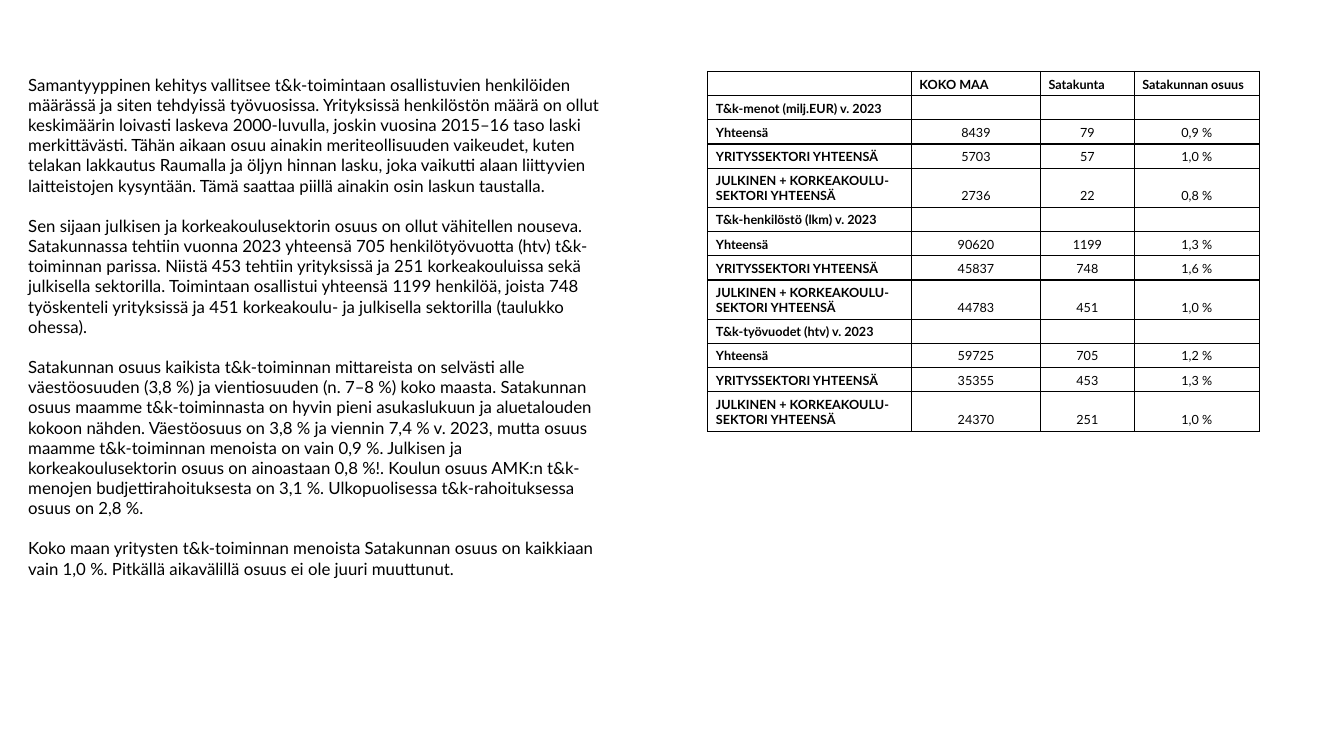
from dataclasses import dataclass

from pptx import Presentation
from pptx.dml.color import RGBColor as Color
from pptx.enum.text import MSO_ANCHOR as Anchor, PP_ALIGN as Align
from pptx.oxml.ns import qn
from pptx.util import Inches, Pt
from lxml.etree import SubElement


@dataclass(frozen=True)
class Theme:
    """Hold the colours, font and type sizes."""
    font: str = "Lato"
    ink: str = "000000"
    body: float = 12
    cell: float = 9
    gap: float = 14.4
    rule: float = 1


THEME = Theme()
WIDTHS = (2.02, 1.28, 0.93, 1.24)
SHORT, TALL = 0.24, 0.39
HEAD = ("", "KOKO MAA", "Satakunta", "Satakunnan osuus")
SECTORS = ("Yhteensä", "YRITYSSEKTORI YHTEENSÄ",
           "JULKINEN + KORKEAKOULU-SEKTORI YHTEENSÄ")
GROUPS = {
    "T&k-menot (milj.EUR) v. 2023": (
        ("8439", "79", "0,9 %"), ("5703", "57", "1,0 %"), ("2736", "22", "0,8 %")),
    "T&k-henkilöstö (lkm) v. 2023": (
        ("90620", "1199", "1,3 %"), ("45837", "748", "1,6 %"), ("44783", "451", "1,0 %")),
    "T&k-työvuodet (htv) v. 2023": (
        ("59725", "705", "1,2 %"), ("35355", "453", "1,3 %"), ("24370", "251", "1,0 %")),
}
STORY = (
    "Samantyyppinen kehitys vallitsee t&k-toimintaan osallistuvien henkilöiden "
    "määrässä ja siten tehdyissä työvuosissa. Yrityksissä henkilöstön määrä on ollut "
    "keskimäärin loivasti laskeva 2000-luvulla, joskin vuosina 2015–16 taso laski "
    "merkittävästi. Tähän aikaan osuu ainakin meriteollisuuden vaikeudet, kuten "
    "telakan lakkautus Raumalla ja öljyn hinnan lasku, joka vaikutti alaan liittyvien "
    "laitteistojen kysyntään. Tämä saattaa piillä ainakin osin laskun taustalla.",
    "Sen sijaan julkisen ja korkeakoulusektorin osuus on ollut vähitellen nouseva. "
    "Satakunnassa tehtiin vuonna 2023 yhteensä 705 henkilötyövuotta (htv) "
    "t&k-toiminnan parissa. Niistä 453 tehtiin yrityksissä ja 251 korkeakouluissa sekä "
    "julkisella sektorilla. Toimintaan osallistui yhteensä 1199 henkilöä, joista 748 "
    "työskenteli yrityksissä ja 451 korkeakoulu- ja julkisella sektorilla (taulukko "
    "ohessa).",
    "Satakunnan osuus kaikista t&k-toiminnan mittareista on selvästi alle "
    "väestöosuuden (3,8 %) ja vientiosuuden (n. 7–8 %) koko maasta. Satakunnan "
    "osuus maamme t&k-toiminnasta on hyvin pieni asukaslukuun ja aluetalouden "
    "kokoon nähden. Väestöosuus on 3,8 % ja viennin 7,4 % v. 2023, mutta osuus "
    "maamme t&k-toiminnan menoista on vain 0,9 %. Julkisen ja "
    "korkeakoulusektorin osuus on ainoastaan 0,8 %!. Koulun osuus AMK:n "
    "t&k-menojen budjettirahoituksesta on 3,1 %. Ulkopuolisessa t&k-rahoituksessa "
    "osuus on 2,8 %.",
    "Koko maan yritysten t&k-toiminnan menoista Satakunnan osuus on kaikkiaan "
    "vain 1,0 %. Pitkällä aikavälillä osuus ei ole juuri muuttunut.",
)


def style(para, size, bold=False):
    """Give every run of a paragraph its font."""
    for run in para.runs:
        font = run.font
        font.name, font.size, font.bold = THEME.font, Pt(size), bold
        font.color.rgb = Color.from_string(THEME.ink)


def frame(cell):
    """Draw the four borders of a table cell."""
    props = cell._tc.get_or_add_tcPr()
    for side in "LRTB":
        line = SubElement(props, qn(f"a:ln{side}"), w=str(Pt(THEME.rule)))
        fill = SubElement(line, qn("a:solidFill"))
        SubElement(fill, qn("a:srgbClr"), val=THEME.ink)


def fill_cell(cell, text, bold):
    """Write and format one table cell."""
    frame(cell)
    cell.fill.background()
    cell.vertical_anchor = Anchor.BOTTOM
    cell.margin_left = cell.margin_right = Inches(0.08)
    cell.margin_top = cell.margin_bottom = Inches(0.04)
    para = cell.text_frame.paragraphs[0]
    para.text = text
    para.alignment = Align.LEFT if bold else Align.CENTER
    style(para, THEME.cell, bold)
    if not text:
        SubElement(para._p, qn("a:endParaRPr"), sz=str(int(THEME.cell * 100)))


def add_story(slide, left, top, width, height):
    """Place the running text in its box."""
    box = slide.shapes.add_textbox(*map(Inches, (left, top, width, height)))
    text = box.text_frame
    text.word_wrap = True
    text.vertical_anchor = Anchor.TOP
    text.margin_left = text.margin_right = text.margin_bottom = 0
    text.margin_top = Inches(0.03)
    text.text = "\n".join(STORY)
    for para in text.paragraphs:
        para.space_after = Pt(THEME.gap)
        style(para, THEME.body)


def add_figures(slide, left, top):
    """Place the table of research figures at a corner."""
    rows = [HEAD]
    for title, lines in GROUPS.items():
        rows.append((title, "", "", ""))
        rows += [(name, *line) for name, line in zip(SECTORS, lines)]
    highs = [TALL if row[0] == SECTORS[-1] else SHORT for row in rows]
    size = (left, top, sum(WIDTHS), sum(highs))
    table = slide.shapes.add_table(len(rows), len(HEAD), *map(Inches, size)).table
    table.first_row = table.horz_banding = False
    for col, width in zip(table.columns, WIDTHS):
        col.width = Inches(width)
    for r, (row, high) in enumerate(zip(rows, highs)):
        table.rows[r].height = Inches(high)
        for c, text in enumerate(row):
            fill_cell(table.cell(r, c), text, r == 0 or c == 0)


def main():
    """Build and save the slide."""
    deck = Presentation()
    deck.slide_width, deck.slide_height = Inches(13.33), Inches(7.5)
    slide = deck.slides.add_slide(deck.slide_layouts[6])
    add_figures(slide, 7.02, 0.71)
    add_story(slide, 0.28, 0.71, 5.72, 5.86)
    deck.save("out.pptx")


if __name__ == "__main__":
    main()
